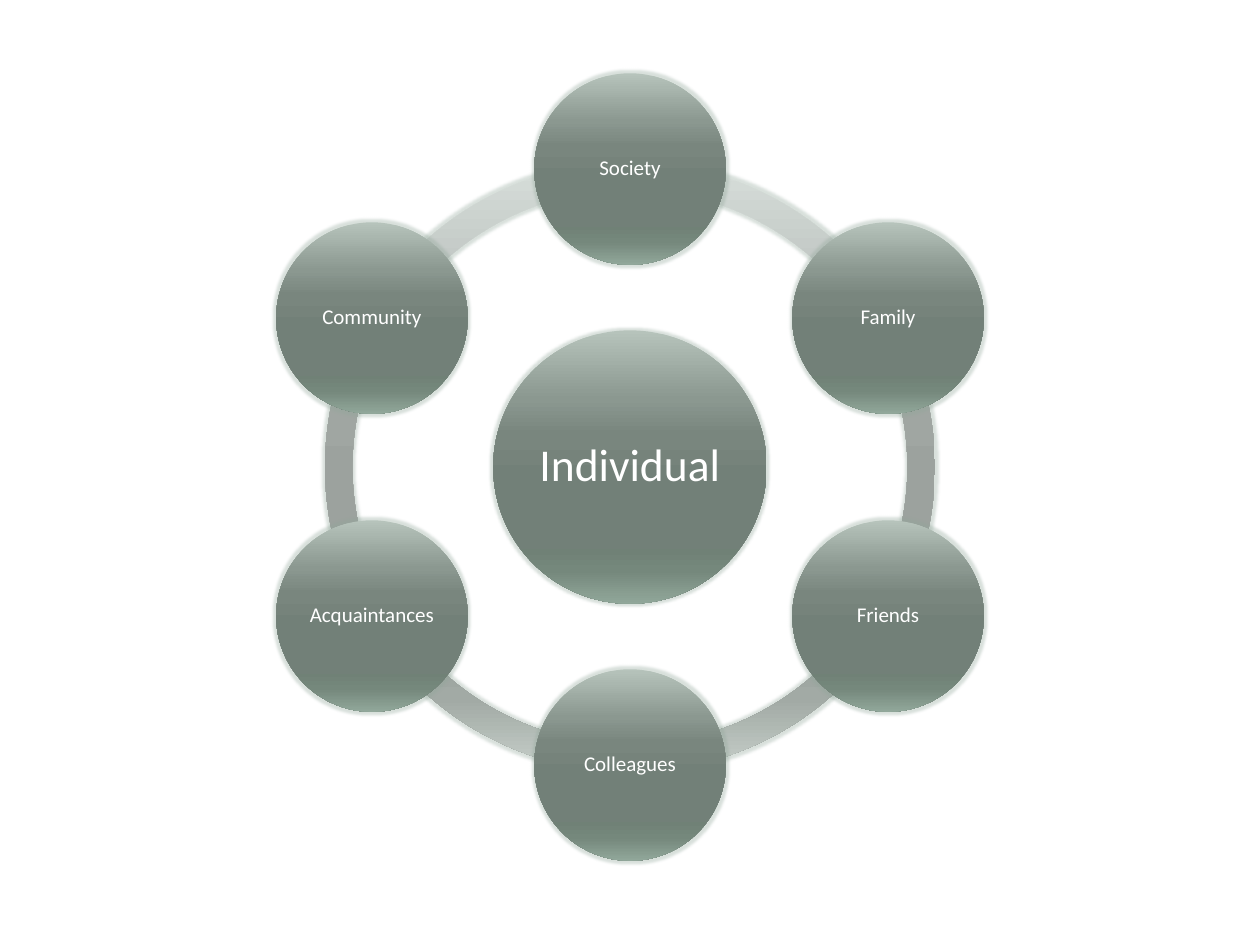
from dataclasses import dataclass
from math import cos, radians, sin

from lxml.etree import SubElement
from pptx import Presentation
from pptx.dml.color import RGBColor
from pptx.enum.shapes import MSO_SHAPE
from pptx.enum.text import MSO_ANCHOR, PP_ALIGN
from pptx.oxml.ns import qn
from pptx.util import Inches, Pt

WHITE = RGBColor(0xFF, 0xFF, 0xFF)
GLOW = RGBColor(0x91, 0xA7, 0x9A)
STOPS = (0, 25, 38, 55, 80, 88, 100)
RING_COLORS = [RGBColor.from_string(c) for c in (
    "D7DEDA", "B7BDBA", "A0A6A2", "9CA29E", "9AA19D", "A2AAA5", "C7D0CA")]
DISC_COLORS = [RGBColor.from_string(c) for c in (
    "B6C3BB", "8B9890", "79867E", "728078", "708176", "75887C", "91A79A")]

# All lengths are percentages of the slide width
PERCENT = Inches(10) / 100
CENTER_X, CENTER_Y = 50, 37.07
RING_SIZE, RING_BAND = 48.4, 0.05
ORBIT, HUB_SIZE, NODE_SIZE = 23.65, 21.7, 15.2
LABELS = ("Society", "Family", "Friends", "Colleagues", "Acquaintances", "Community")
STEP = 360 / len(LABELS)
TOP = 270  # degrees, clockwise from the right


@dataclass
class Disc:
    label: str
    x: float
    y: float
    size: float
    font_size: int
    margin: float


def add_round(s, preset, x: float, y: float, size: float, colors: list):
    """Add a shape centred on x, y with a vertical gradient and a soft edge."""
    left, top, side = (round(v * PERCENT) for v in (x - size / 2, y - size / 2, size))
    sp = s.shapes.add_shape(preset, left, top, side, side)
    sp.shadow.inherit = False
    sp.line.fill.background()
    sp.fill.gradient()
    sp.fill.gradient_angle = 270
    props = sp._element.spPr

    # Gradient stops
    stops = props.find(".//" + qn("a:gsLst"))
    for old in list(stops):
        stops.remove(old)
    for pos, color in zip(STOPS, colors):
        stop = SubElement(stops, qn("a:gs"), pos=str(pos * 1000))
        SubElement(stop, qn("a:srgbClr"), val=str(color))

    # Soft edge glow
    glow = SubElement(props.find(qn("a:effectLst")), qn("a:glow"), rad=str(Pt(3)))
    tint = SubElement(glow, qn("a:srgbClr"), val=str(GLOW))
    SubElement(tint, qn("a:alpha"), val="35000")
    return sp


def add_arc(s, start: float) -> None:
    sp = add_round(s, MSO_SHAPE.BLOCK_ARC, CENTER_X, CENTER_Y, RING_SIZE, RING_COLORS)
    # Angles are stored in 60000ths of a degree, adjustments in 100000ths
    for i, angle in enumerate((start, start + STEP)):
        sp.adjustments[i] = angle % 360 * 0.6
    sp.adjustments[2] = RING_BAND * 0.9


def add_disc(s, disc: Disc) -> None:
    sp = add_round(s, MSO_SHAPE.OVAL, disc.x, disc.y, disc.size, DISC_COLORS)
    tf = sp.text_frame
    margin = Inches(disc.margin)
    frame_format = {"word_wrap": True, "vertical_anchor": MSO_ANCHOR.MIDDLE,
                    "margin_left": margin, "margin_right": margin,
                    "margin_top": margin, "margin_bottom": margin}
    for name, value in frame_format.items():
        setattr(tf, name, value)
    p = tf.paragraphs[0]
    p.alignment = PP_ALIGN.CENTER
    p.line_spacing = 0.9
    r = p.add_run()
    r.text = disc.label
    for name, value in {"name": "Calibri", "size": Pt(disc.font_size)}.items():
        setattr(r.font, name, value)
    r.font.color.rgb = WHITE


def main() -> None:
    prs = Presentation()
    prs.slide_width, prs.slide_height = Inches(10), Inches(7.5)
    s = prs.slides.add_slide(prs.slide_layouts[6])
    angles = [TOP + i * STEP for i in range(len(LABELS))]

    # Ring, drawn behind the discs
    for angle in reversed(angles):
        add_arc(s, angle)

    # Hub and the discs around it
    add_disc(s, Disc("Individual", CENTER_X, CENTER_Y, HUB_SIZE, 26, 0.04))
    for label, angle in zip(LABELS, angles):
        x = CENTER_X + ORBIT * cos(radians(angle))
        y = CENTER_Y + ORBIT * sin(radians(angle))
        add_disc(s, Disc(label, x, y, NODE_SIZE, 12, 0.02))

    prs.save("out.pptx")


if __name__ == "__main__":
    main()
